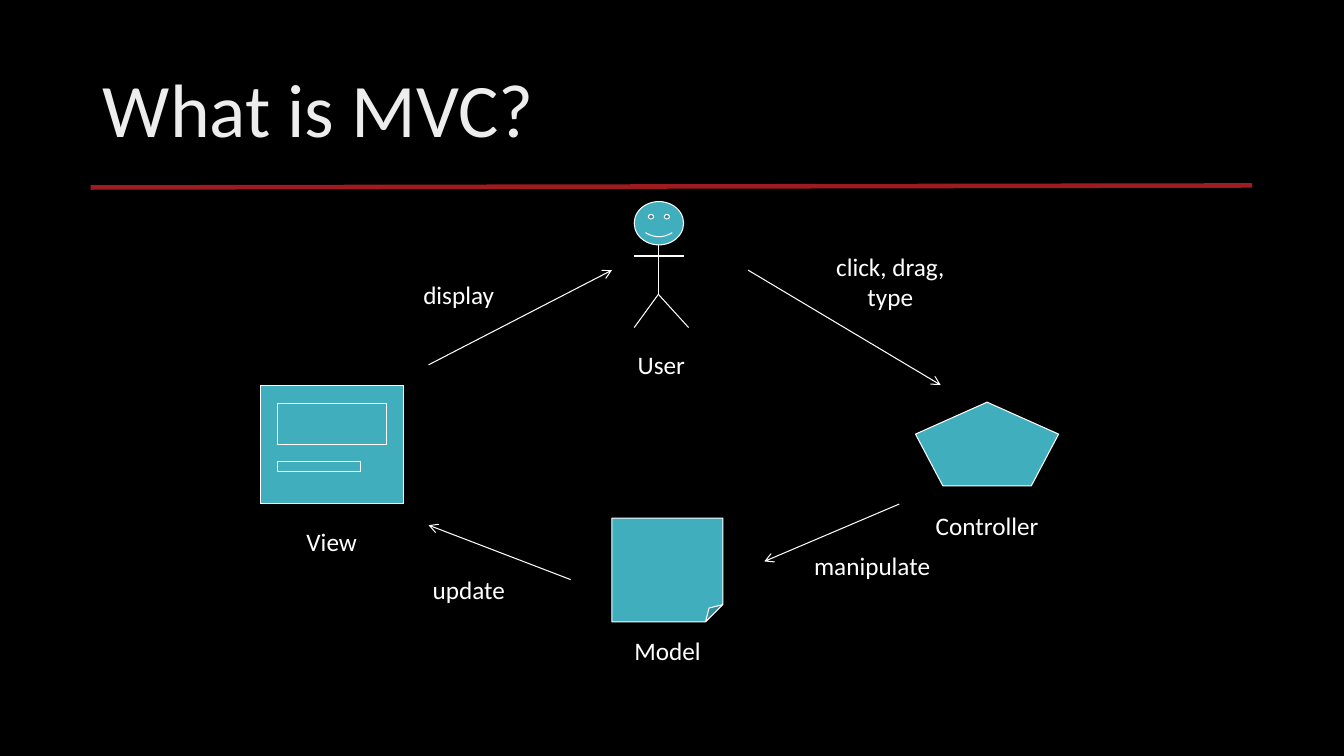
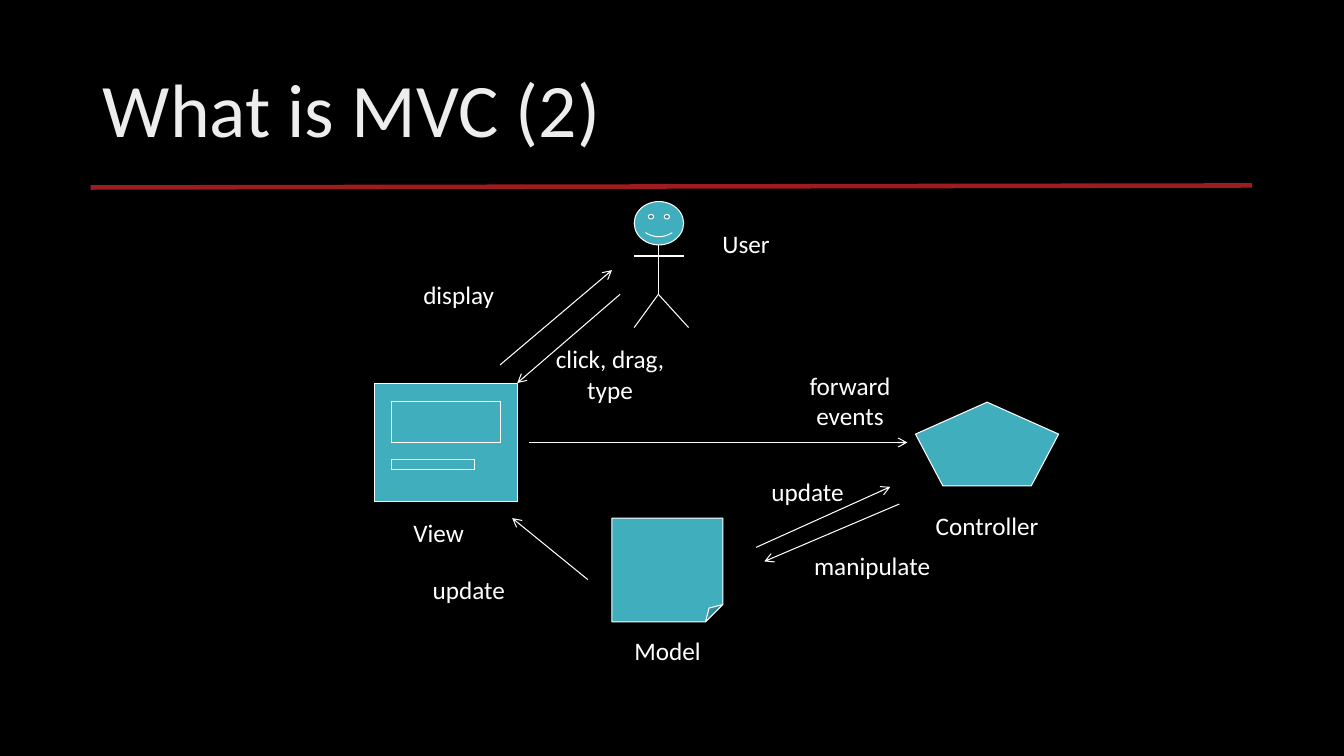
"""Build two slides that show how the parts of MVC talk to each other."""
from dataclasses import dataclass
from typing import Any

from lxml import etree
from pptx import Presentation
from pptx import util as u
from pptx.dml import color as dc
from pptx.enum import shapes as es
from pptx.enum import text as et
from pptx.oxml import ns

COLORS = {"back": "000000", "title": "EDEDED", "rule": "9E1B20",
          "fill": "41AEBD", "ink": "FFFFFF"}
FONT = "Calibri"
KIND = es.MSO_SHAPE


@dataclass(frozen=True)
class Label:
    text: str
    left: float
    top: float
    width: float = 1.68
    height: float = 0.4


@dataclass(frozen=True)
class Line:
    x1: float
    y1: float
    x2: float
    y2: float


@dataclass(frozen=True)
class Scene:
    title: str
    view: tuple[float, float]
    labels: tuple[Label, ...]
    arrows: tuple[Line, ...]


LABELS = (
    Label("Controller", 8.83, 5.01, 1.92),
    Label("Model", 5.66, 6.25, 1.92),
    Label("manipulate", 7.81, 5.41),
    Label("update", 3.81, 5.65),
    Label("display", 3.71, 2.72),
)
ARROWS = (Line(8.92, 5, 7.58, 5.57),)
LIMBS = (
    Line(6.53, 2.43, 6.53, 2.92),
    Line(6.53, 2.92, 6.29, 3.25),
    Line(6.53, 2.92, 6.83, 3.25),
    Line(6.29, 2.54, 6.78, 2.54),
)
SCENES = (
    Scene(
        "What is MVC?", (2.58, 3.82),
        (Label("User", 5.31, 3.42, 2.5),
         Label("View", 2.33, 5.17, 1.92),
         Label("click, drag, type", 8.12, 2.44, 1.42, 0.71)),
        (Line(7.42, 2.68, 9.33, 3.82),
         Line(5.66, 5.75, 4.25, 5.21),
         Line(4.25, 3.62, 6.07, 2.68)),
    ),
    Scene(
        "What is MVC (2)", (3.71, 3.8),
        (Label("User", 6.15, 2.22, 2.5),
         Label("View", 3.39, 5.08, 1.92),
         Label("click, drag, type", 5.39, 3.36, 1.32, 0.71),
         Label("forward events", 7.77, 3.62, 1.32, 0.71),
         Label("update", 7.17, 4.68)),
        (Line(6.15, 2.92, 5.13, 3.8),
         Line(5.83, 5.75, 5.08, 5.14),
         Line(4.96, 3.62, 6.07, 2.68),
         Line(5.25, 4.39, 9, 4.39),
         Line(7.5, 5.43, 8.83, 4.83)),
    ),
)


def tint(name: str) -> dc.RGBColor:
    return dc.RGBColor.from_string(COLORS[name])


def write(frame: Any, text: str, *, size: float = 18, color: str = "ink",
          align: Any = et.PP_ALIGN.CENTER, space: float = 1.0) -> None:
    frame.word_wrap = True
    para = frame.paragraphs[0]
    para.alignment, para.line_spacing = align, space
    run = para.add_run()
    run.text = text
    run.font.name, run.font.size = FONT, u.Pt(size)
    run.font.color.rgb = tint(color)


def add_label(area: Any, label: Label) -> None:
    box = area.add_textbox(u.Inches(label.left), u.Inches(label.top),
                           u.Inches(label.width), u.Inches(label.height))
    write(box.text_frame, label.text)
    box.text_frame.auto_size = et.MSO_AUTO_SIZE.SHAPE_TO_FIT_TEXT


def add_line(area: Any, line: Line, *, color: str = "ink",
             width: float = 0.75, arrow: bool = False) -> None:
    link = area.add_connector(
        es.MSO_CONNECTOR.STRAIGHT, u.Inches(line.x1), u.Inches(line.y1),
        u.Inches(line.x2), u.Inches(line.y2))
    link.line.color.rgb, link.line.width = tint(color), u.Pt(width)
    props = link.element.spPr
    if arrow:
        etree.SubElement(props.find(ns.qn("a:ln")), ns.qn("a:tailEnd"),
                         type="arrow")
    etree.SubElement(props, ns.qn("a:effectLst"))


def add_form(area: Any, kind: Any, left: float, top: float,
             width: float, height: float) -> None:
    form = area.add_shape(kind, u.Inches(left), u.Inches(top),
                          u.Inches(width), u.Inches(height))
    form.shadow.inherit = False
    form.fill.solid()
    form.fill.fore_color.rgb = tint("fill")
    form.line.color.rgb, form.line.width = tint("ink"), u.Pt(0.75)


def add_user(area: Any) -> None:
    group = area.add_group_shape().shapes
    add_form(group, KIND.SMILEY_FACE, 6.29, 2, 0.49, 0.43)
    for limb in LIMBS:
        add_line(group, limb)


def add_view(area: Any, left: float, top: float) -> None:
    group = area.add_group_shape().shapes
    for dx, dy, width, height in ((0, 0, 1.42, 1.18),
                                  (0.17, 0.18, 1.08, 0.41),
                                  (0.17, 0.76, 0.83, 0.1)):
        add_form(group, KIND.RECTANGLE, left + dx, top + dy, width, height)


def add_title(slide: Any, text: str) -> None:
    add_line(slide.shapes, Line(0.9, 1.86, 12.42, 1.84),
             color="rule", width=3.25)
    title = slide.shapes.title
    title.left, title.top = u.Inches(0.92), u.Inches(0.4)
    title.width, title.height = u.Inches(11.5), u.Inches(1.45)
    title.text_frame.vertical_anchor = et.MSO_ANCHOR.MIDDLE
    write(title.text_frame, text, size=54, color="title",
          align=et.PP_ALIGN.LEFT, space=0.9)


def add_scene(deck: Any, scene: Scene) -> None:
    slide = deck.slides.add_slide(deck.slide_layouts[5])
    area = slide.shapes
    add_title(slide, scene.title)
    add_user(area)
    add_view(area, *scene.view)
    add_form(area, KIND.REGULAR_PENTAGON, 9.08, 3.99, 1.42, 0.83)
    add_form(area, KIND.FOLDED_CORNER, 6.07, 5.14, 1.1, 1.03)
    for arrow in ARROWS + scene.arrows:
        add_line(area, arrow, arrow=True)
    for label in LABELS + scene.labels:
        add_label(area, label)


def main() -> None:
    deck = Presentation()
    deck.slide_width, deck.slide_height = u.Inches(13.33), u.Inches(7.5)
    back = deck.slide_master.background.fill
    back.solid()
    back.fore_color.rgb = tint("back")
    for scene in SCENES:
        add_scene(deck, scene)
    deck.save("out.pptx")


if __name__ == "__main__":
    main()
